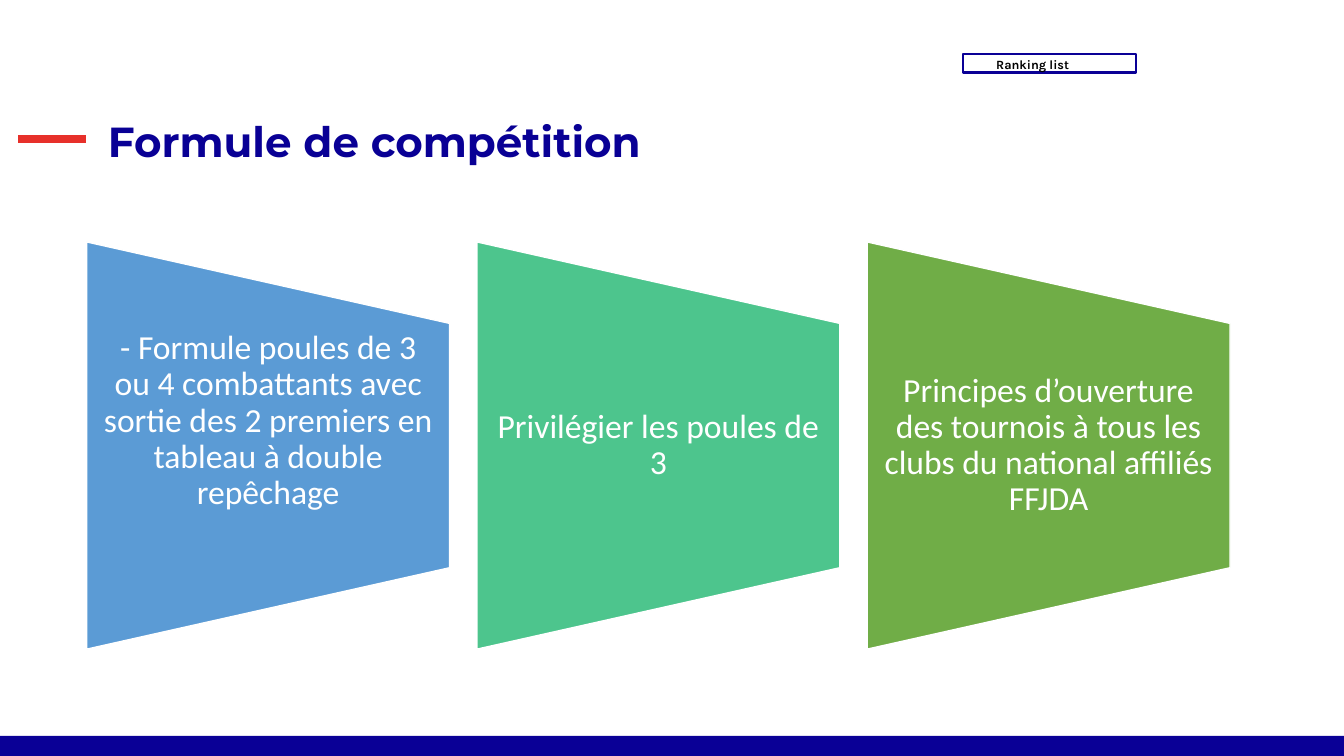
from lxml import etree
from pptx import Presentation
from pptx.dml.color import RGBColor
from pptx.enum.shapes import MSO_CONNECTOR, MSO_SHAPE
from pptx.enum.text import MSO_ANCHOR, PP_ALIGN
from pptx.oxml.ns import qn
from pptx.util import Inches, Pt

RECTANGLE = MSO_SHAPE.RECTANGLE
TRAPEZOID = MSO_SHAPE.FLOWCHART_MANUAL_OPERATION
STRAIGHT = MSO_CONNECTOR.STRAIGHT
TOP, MIDDLE, BOTTOM = MSO_ANCHOR.TOP, MSO_ANCHOR.MIDDLE, MSO_ANCHOR.BOTTOM
LEFT, CENTER = PP_ALIGN.LEFT, PP_ALIGN.CENTER

SLIDE_W, SLIDE_H = 13.33, 7.5
NAVY, RED, WHITE, BLACK = "0A0096", "E7302A", "FFFFFF", "000000"

# Text, fill and space kept free below the text
PANELS = [
    ("- Formule poules de 3 ou 4 combattants avec sortie des 2 premiers "
     "en tableau à double repêchage", "5B9BD5", 0.48),
    ("Privilégier les poules de 3", "4DC58D", 0),
    ("Principes d’ouverture des tournois à tous les clubs du national "
     "affiliés FFJDA", "70AD47", 0),
]


def color(value):
    return RGBColor.from_string(value)


def add_block(slide, kind, x, y, w, h, fill=None, line=None, line_width=1):
    block = slide.shapes.add_shape(kind, Inches(x), Inches(y), Inches(w), Inches(h))
    block.shadow.inherit = False
    if fill:
        block.fill.solid()
        block.fill.fore_color.rgb = color(fill)
    else:
        block.fill.background()
    if line:
        block.line.color.rgb = color(line)
        block.line.width = Pt(line_width)
    else:
        block.line.fill.background()
    return block


def add_text(slide, text, x, y, w, h, font="Calibri", size=24, ink=WHITE,
             bold=False, align=LEFT, anchor=TOP, spacing=0.9, side=0, below=0):
    box = slide.shapes.add_textbox(Inches(x), Inches(y), Inches(w), Inches(h))
    frame = box.text_frame
    frame.word_wrap = True
    frame.vertical_anchor = anchor
    frame.margin_left = frame.margin_right = Inches(side)
    frame.margin_top, frame.margin_bottom = 0, Inches(below)
    paragraph = frame.paragraphs[0]
    paragraph.alignment = align
    paragraph.line_spacing = spacing
    run = paragraph.add_run()
    run.text = text
    run.font.name = font
    run.font.size = Pt(size)
    run.font.bold = bold
    run.font.color.rgb = color(ink)


def add_ranking_tag(slide, x, y, w, h):
    add_block(slide, RECTANGLE, x, y, w, h, line=NAVY, line_width=1.5)
    add_text(slide, "Ranking list", x, y, w, h, font="Karla", size=9,
             ink=BLACK, bold=True, spacing=1.15, side=0.33)


def add_heading(slide, x, y, w, h):
    # Red dash, then the title
    dash_w, title_offset, dash_y = 0.67, 0.89, y + 0.31
    dash = slide.shapes.add_connector(STRAIGHT, Inches(x), Inches(dash_y),
                                      Inches(x + dash_w), Inches(dash_y))
    dash.line.color.rgb = color(RED)
    dash.line.width = Pt(6)
    etree.SubElement(dash._element.spPr, qn("a:effectLst"))
    add_text(slide, "Formule de compétition", x + title_offset, y,
             w - title_offset, h, font="Montserrat", size=30, ink="090095",
             bold=True, anchor=BOTTOM)


def add_panel(slide, text, fill, below, x, y, w, h):
    # The trapezoid is turned a quarter, so its own sides are swapped
    trapezoid = add_block(slide, TRAPEZOID, x + (w - h) / 2, y + (h - w) / 2,
                          h, w, fill=fill, line=WHITE)
    trapezoid.rotation = 270
    add_text(slide, text, x, y + h / 5, w, h * 3 / 5, align=CENTER,
             anchor=MIDDLE, side=0.17, below=below)


def add_panels(slide, x, y, w, h, gap=0.27):
    panel_w = (w - gap * (len(PANELS) - 1)) / len(PANELS)
    for index, (text, fill, below) in enumerate(PANELS):
        add_panel(slide, text, fill, below, x + index * (panel_w + gap), y, panel_w, h)


def main():
    deck = Presentation()
    deck.slide_width, deck.slide_height = Inches(SLIDE_W), Inches(SLIDE_H)
    slide = deck.slides.add_slide(deck.slide_layouts[6])

    # Footer band
    add_block(slide, RECTANGLE, 0, 7.3, SLIDE_W, SLIDE_H - 7.3, fill=NAVY)
    add_ranking_tag(slide, 9.55, 0.54, 1.72, 0.18)
    add_heading(slide, 0.18, 1.07, 11.73, 0.58)
    add_panels(slide, 0.86, 2.4, 11.34, 4.04)
    deck.save("out.pptx")


if __name__ == "__main__":
    main()
